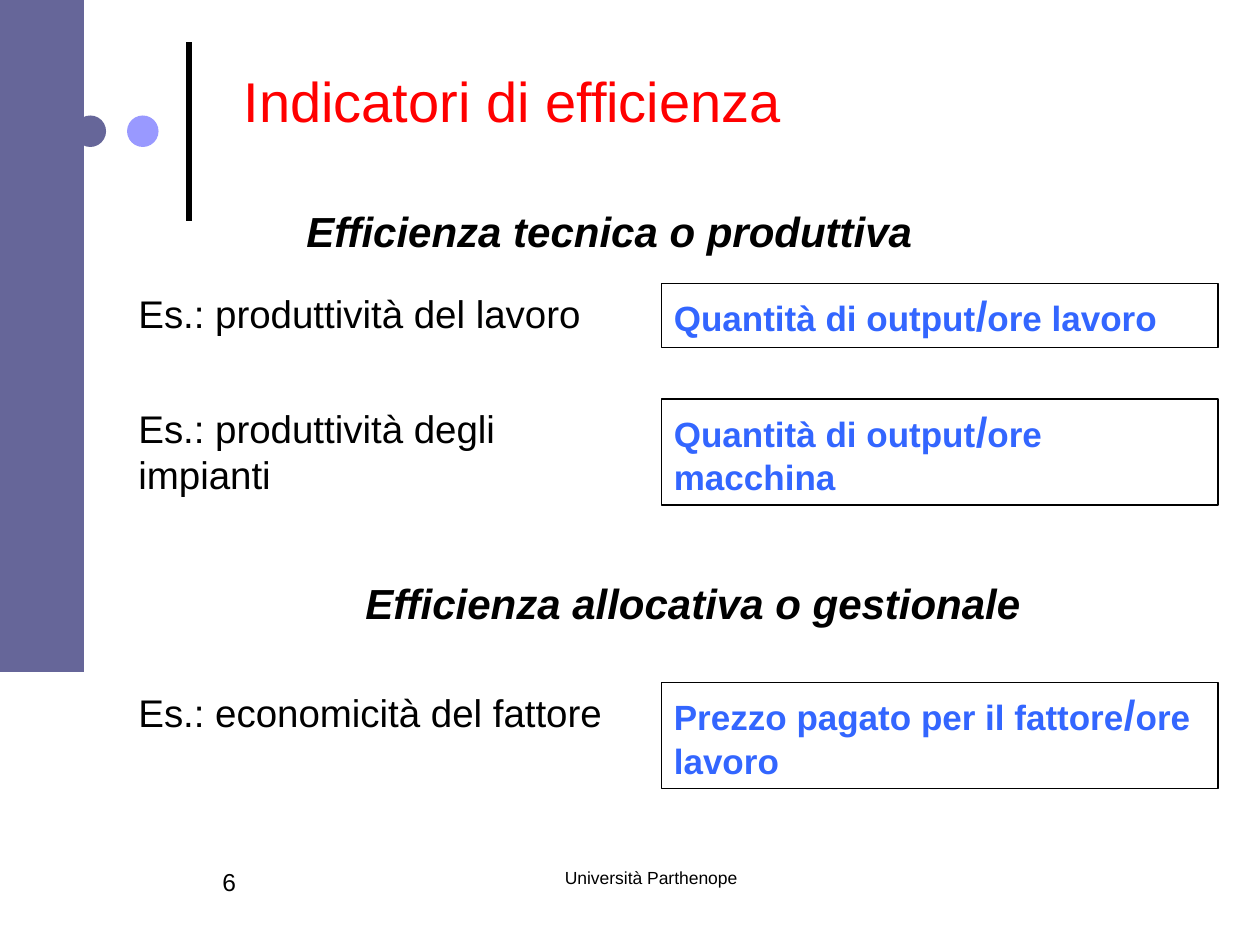
import dataclasses
from typing import Any, NamedTuple

import pptx
import pptx.dml.color
import pptx.enum.shapes
import pptx.enum.text
import pptx.util
from lxml import etree

Align = pptx.enum.text.PP_ALIGN
Anchor = pptx.enum.text.MSO_ANCHOR
Kind = pptx.enum.shapes.MSO_SHAPE


@dataclasses.dataclass(frozen=True)
class Theme:
    font: str = "Arial"
    ink: str = "000000"
    red: str = "FF0000"
    blue: str = "3366FF"
    slate: str = "666699"
    lilac: str = "9999FF"
    title: int = 32
    head: int = 24
    slash: int = 24
    label: int = 22
    ratio: int = 20
    page: int = 14
    foot: int = 10


class Area(NamedTuple):
    """Left, top, width and height in grid cells."""
    left: float
    top: float
    width: float
    height: float


class Row(NamedTuple):
    """An example with its ratio, placed at a grid row."""
    top: float
    label: str
    span: float
    over: str
    under: str
    height: float


class Note(NamedTuple):
    area: Area
    text: str
    size: int
    align: Any = Align.LEFT
    strong: bool = False
    lead: float = 1.0


THEME = Theme()
CELL = pptx.util.Inches(10) // 120  # the slide is 120 columns by 90 rows

ROWS = [
    Row(27, "Es.: produttività del lavoro", 45, "Quantità di output", "ore lavoro", 6.1),
    Row(38, "Es.: produttività degli impianti", 45, "Quantità di output", "ore macchina", 10.1),
    Row(65, "Es.: economicità del fattore", 51, "Prezzo pagato per il fattore", "ore lavoro", 10.1),
]
NOTES = [
    Note(Area(43, 82, 38, 6), "Università Parthenope", THEME.foot, Align.CENTER),
    Note(Area(20, 82, 17, 6), "6", THEME.page),
    Note(Area(28, 19, 67, 6), "Efficienza tecnica o produttiva", THEME.head, strong=True),
    Note(Area(31, 55, 70, 5.5), "Efficienza allocativa o gestionale", THEME.head,
         Align.CENTER, True, 0.9),
]


def color(code: str) -> Any:
    return pptx.dml.color.RGBColor.from_string(code)


def scale(area: Area) -> list[int]:
    """Turn grid cells into slide lengths."""
    return [round(part * CELL) for part in area]


def style(para: Any, size: int, tint: str, bold: bool = False, slant: bool = False) -> None:
    font = para.font
    font.name, font.size = THEME.font, pptx.util.Pt(size)
    font.bold, font.italic = bold, slant
    font.color.rgb = color(tint)


def add_shape(slide: Any, kind: Any, area: Area, fill: str | None = None) -> Any:
    """Draw a filled shape without outline, or an empty one with a thin outline."""
    shape = slide.shapes.add_shape(kind, *scale(area))
    shape.shadow.inherit = False
    if fill:
        shape.fill.solid()
        shape.fill.fore_color.rgb = color(fill)
        shape.line.fill.background()
    else:
        shape.fill.background()
        shape.line.color.rgb = color(THEME.ink)
        shape.line.width = pptx.util.Pt(0.75)
    return shape


def add_note(slide: Any, note: Note) -> None:
    frame = slide.shapes.add_textbox(*scale(note.area)).text_frame
    frame.word_wrap = True
    para = frame.paragraphs[0]
    para.text, para.alignment = note.text, note.align
    para.line_spacing = note.lead
    style(para, note.size, THEME.ink, note.strong, note.strong)


def add_row(slide: Any, row: Row) -> None:
    add_note(slide, Note(Area(12, row.top, row.span, 5.6), row.label, THEME.label))
    box = add_shape(slide, Kind.RECTANGLE, Area(63, row.top, 53, row.height))
    frame = box.text_frame
    frame.word_wrap, frame.vertical_anchor = True, Anchor.TOP
    para = frame.paragraphs[0]
    para.alignment = Align.LEFT
    style(para, THEME.ratio, THEME.blue, bold=True)
    for text in (row.over, "/", row.under):
        run = para.add_run()
        run.text = text
        if text == "/":
            run.font.size = pptx.util.Pt(THEME.slash)


def add_decor(slide: Any) -> None:
    ends = scale(Area(18, 21, 18, 4))
    rule = slide.shapes.add_connector(pptx.enum.shapes.MSO_CONNECTOR.STRAIGHT, *ends)
    rule.line.color.rgb = color(THEME.ink)
    rule.line.width = pptx.util.Pt(3)
    props = rule.line._get_or_add_ln().getparent()
    etree.SubElement(props, pptx.oxml.ns.qn("a:effectLst"))
    for left, tint in ((7.1, THEME.slate), (12.1, THEME.lilac)):
        add_shape(slide, Kind.OVAL, Area(left, 11, 3, 3), tint)
    add_shape(slide, Kind.RECTANGLE, Area(0, 0, 8, 64), THEME.slate)


def set_title(slide: Any, text: str) -> None:
    title = slide.shapes.title
    title.left, title.top, title.width, title.height = scale(Area(22, 2, 98, 15))
    frame = title.text_frame
    frame.word_wrap, frame.vertical_anchor = True, Anchor.MIDDLE
    para = frame.paragraphs[0]
    para.text, para.alignment = text, Align.LEFT
    style(para, THEME.title, THEME.red)


def main() -> None:
    deck = pptx.Presentation()
    deck.slide_width, deck.slide_height = 120 * CELL, 90 * CELL
    slide = deck.slides.add_slide(deck.slide_layouts[5])
    add_decor(slide)
    set_title(slide, "Indicatori di efficienza")
    for note in NOTES:
        add_note(slide, note)
    for row in ROWS:
        add_row(slide, row)
    deck.save("out.pptx")


if __name__ == "__main__":
    main()
